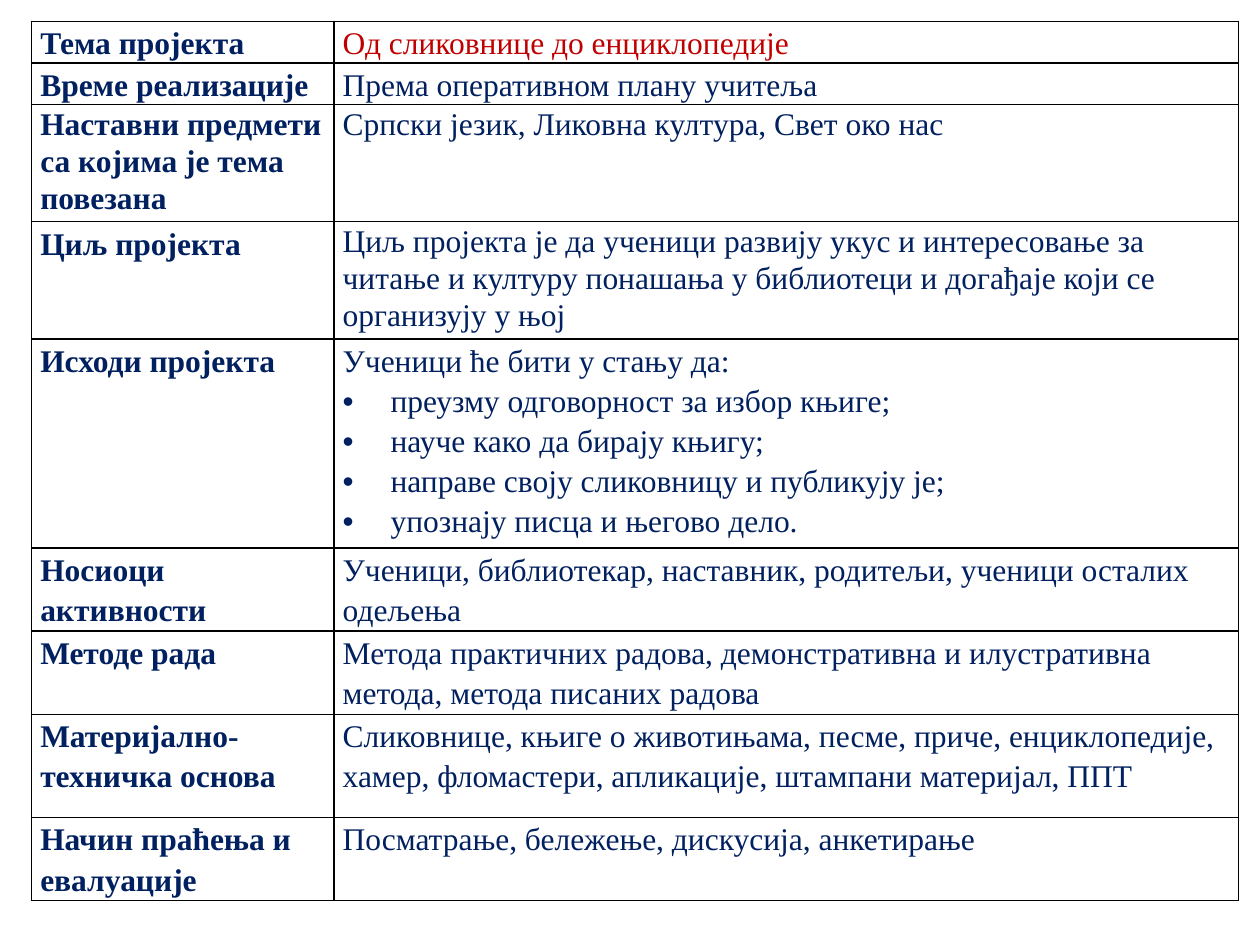
from lxml.etree import SubElement
from pptx import Presentation
from pptx.dml.color import RGBColor
from pptx.enum.text import PP_ALIGN
from pptx.oxml.ns import qn
from pptx.util import Inches, Pt

NAVY = RGBColor(0x00, 0x20, 0x60)
RED = RGBColor(0xC0, 0x00, 0x00)
BORDER = "000000"
BULLET_INDENT = Inches(0.38)

# Row height, label, paragraphs of the content
ROWS = [
    (0.33, "Тема пројекта", ["Од сликовнице до енциклопедије"]),
    (0.33, "Време реализације", ["Према оперативном плану учитеља"]),
    (0.93, "Наставни предмети са којима је тема повезана",
     ["Српски језик, Ликовна култура, Свет око нас"]),
    (0.93, "Циљ пројекта",
     ["Циљ пројекта је да ученици развију укус и интересовање за читање и културу "
      "понашања у библиотеци и догађаје који се организују у њој"]),
    (1.66, "Исходи пројекта",
     ["Ученици ће бити у стању да:",
      "преузму одговорност за избор књиге;",
      "науче како да бирају књигу;",
      "направе своју сликовницу и публикују је;",
      "упознају писца и његово дело."]),
    (0.66, "Носиоци активности",
     ["Ученици, библиотекар, наставник, родитељи, ученици осталих одељења"]),
    (0.66, "Методе рада",
     ["Метода практичних радова, демонстративна и илустративна метода, "
      "метода писаних радова"]),
    (0.82, "Материјално-техничка основа",
     ["Сликовнице, књиге о животињама, песме, приче, енциклопедије, хамер, "
      "фломастери, апликације, штампани материјал, ППТ"]),
    (0.66, "Начин праћења и евалуације",
     ["Посматрање, бележење, дискусија, анкетирање"]),
]
# Cells (row, column) that differ from justified text at 1.15 line spacing
LEFT_CELLS = {(2, 0), (3, 1), (5, 1), (6, 1), (7, 0), (7, 1), (8, 0)}
TIGHT_CELLS = {(2, 0), (2, 1), (3, 1)}


def add_borders(cell):
    properties = cell._tc.get_or_add_tcPr()
    for side in ("a:lnL", "a:lnR", "a:lnT", "a:lnB"):
        line = SubElement(properties, qn(side), w=str(Pt(1)))
        fill = SubElement(line, qn("a:solidFill"))
        SubElement(fill, qn("a:srgbClr"), val=BORDER)


def add_bullet(para):
    properties = para._p.get_or_add_pPr()
    properties.set("marL", str(BULLET_INDENT))
    properties.set("indent", str(-BULLET_INDENT))
    SubElement(properties, qn("a:buFont"), typeface="Arial")
    SubElement(properties, qn("a:buChar"), char="•")


deck = Presentation()
deck.slide_width, deck.slide_height = Inches(10), Inches(7.5)
page = deck.slides.add_slide(deck.slide_layouts[6])

# Project table
height = sum(row[0] for row in ROWS)
table = page.shapes.add_table(len(ROWS), 2, Inches(0.25), Inches(0.17),
                              Inches(9.58), Inches(height)).table
table.first_row = table.horz_banding = False
table.columns[0].width = Inches(2.4)
table.columns[1].width = Inches(7.18)

for row, (row_height, label, content) in enumerate(ROWS):
    table.rows[row].height = Inches(row_height)
    for column, lines in enumerate(([label], content)):
        # Cell frame
        cell = table.cell(row, column)
        cell.margin_left = cell.margin_right = Inches(0.07)
        cell.margin_top = cell.margin_bottom = 0
        add_borders(cell)
        cell.fill.background()

        # Cell text, with bullets after the first paragraph
        cell.text_frame.text = "\n".join(lines)
        for number, para in enumerate(cell.text_frame.paragraphs):
            place = (row, column)
            para.alignment = PP_ALIGN.LEFT if place in LEFT_CELLS else PP_ALIGN.JUSTIFY
            para.line_spacing = 1.07 if place in TIGHT_CELLS else 1.15
            if number > 0:
                add_bullet(para)
            for span in para.runs:
                span.font.name = "Times New Roman"
                span.font.size = Pt(18)
                span.font.bold = column == 0
                span.font.color.rgb = RED if place == (0, 1) else NAVY

deck.save("out.pptx")
